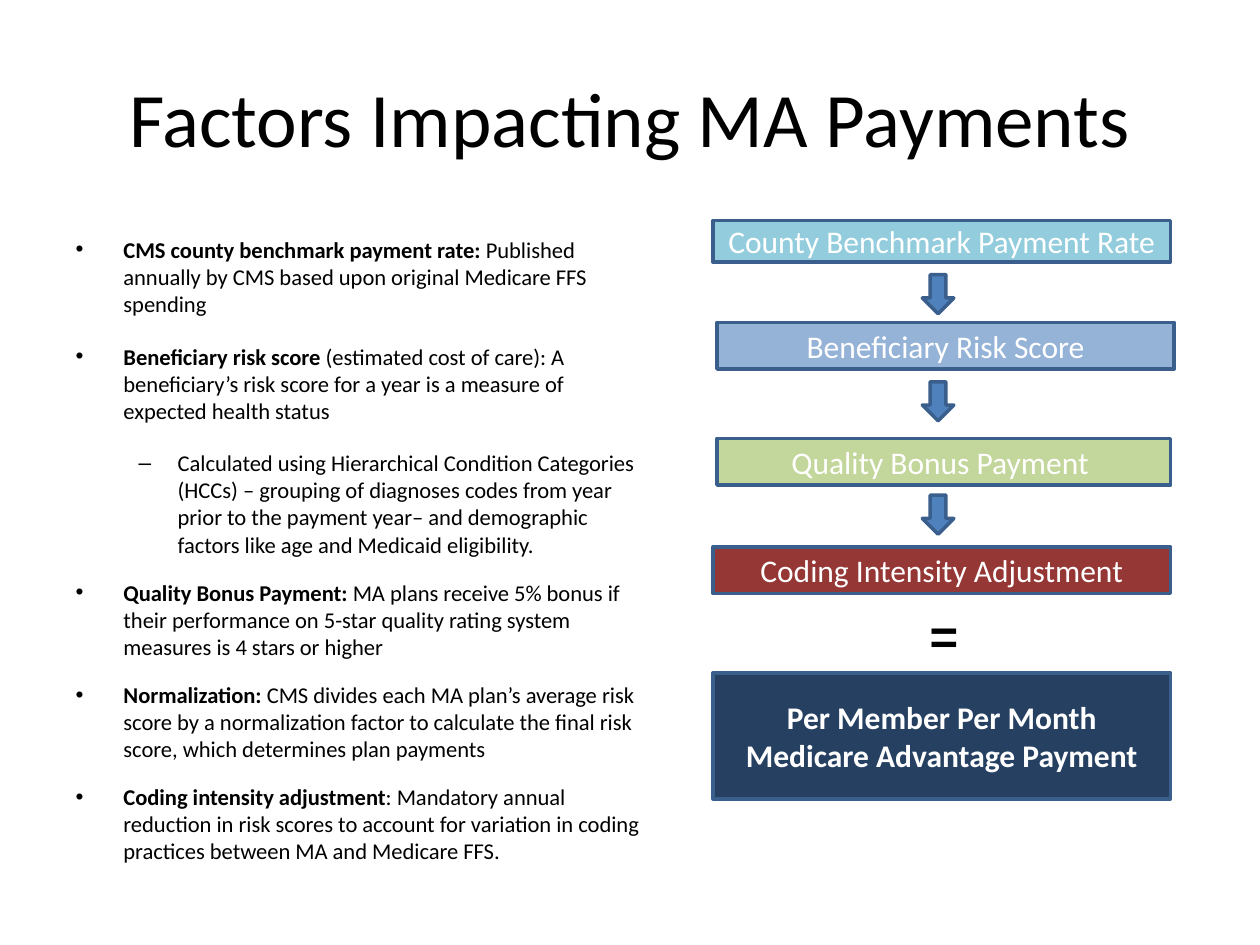
from dataclasses import dataclass

from lxml.etree import SubElement
from pptx import Presentation
from pptx.dml.color import RGBColor
from pptx.enum.shapes import MSO_SHAPE as Shape
from pptx.enum.text import MSO_ANCHOR as Anchor, MSO_AUTO_SIZE as Fit, PP_ALIGN as Align
from pptx.oxml.ns import qn
from pptx.util import Inches, Pt


@dataclass(frozen=True)
class Theme:
    """Hold the colours, fonts and type sizes."""
    font: str = "Calibri"
    sign_font: str = "Arial"
    ink: str = "000000"
    light: str = "FFFFFF"
    edge: str = "3A5F8C"
    arrow: str = "4F81BD"
    rate: str = "93CDDD"
    risk: str = "95B3D7"
    bonus: str = "C3D69B"
    coding: str = "953735"
    total: str = "254061"
    title: float = 44
    body: float = 12.9
    label: float = 18
    sign: float = 28
    line: float = 2


THEME = Theme()

POINTS = [
    (0, 0, "CMS county benchmark payment rate: ",
     "Published annually by CMS based upon original Medicare FFS spending"),
    (0, 2.6, "Beneficiary risk score ",
     "(estimated cost of care): A beneficiary’s risk score for a year is a measure "
     "of expected health status"),
    (1, 2.6, "",
     "Calculated using Hierarchical Condition Categories (HCCs) – grouping of diagnoses "
     "codes from year prior to the payment year– and demographic factors like age and "
     "Medicaid eligibility."),
    (0, 0, "Quality Bonus Payment: ",
     "MA plans receive 5% bonus if their performance on 5-star quality rating system "
     "measures is 4 stars or higher"),
    (0, 0, "Normalization: ",
     "CMS divides each MA plan’s average risk score by a normalization factor to "
     "calculate the final risk score, which determines plan payments"),
    (0, 0, "Coding intensity adjustment",
     ": Mandatory annual reduction in risk scores to account for variation in coding "
     "practices between MA and Medicare FFS."),
]
BULLETS = [("•", 0.38, 0.38), ("–", 0.81, 0.31)]

STEPS = [
    ("County Benchmark Payment Rate", THEME.rate, 0, 0, 3.63, 0.33, False),
    ("Beneficiary Risk Score", THEME.risk, 0.03, 0.81, 3.63, 0.37, False),
    ("Quality Bonus Payment ", THEME.bonus, 0.03, 1.73, 3.6, 0.37, False),
    ("Coding Intensity Adjustment", THEME.coding, 0, 2.59, 3.63, 0.37, False),
    ("Per Member Per Month Medicare Advantage Payment", THEME.total, 0, 3.59, 3.63, 1, True),
]
ARROWS = [0.43, 1.28, 2.18]


def style(font, size, color, bold=False, name=THEME.font):
    """Set the face, size, colour and weight of a font."""
    font.name, font.size, font.bold = name, Pt(size), bold
    font.color.rgb = RGBColor.from_string(color)


def place(shape, box):
    """Move a shape to a box given in inches."""
    shape.left, shape.top, shape.width, shape.height = map(Inches, box)


def block(slide, kind, box, fill):
    """Add a filled and outlined shape."""
    shape = slide.shapes.add_shape(kind, *map(Inches, box))
    shape.shadow.inherit = False
    shape.fill.solid()
    shape.fill.fore_color.rgb = RGBColor.from_string(fill)
    shape.line.color.rgb = RGBColor.from_string(THEME.edge)
    shape.line.width = Pt(THEME.line)
    return shape


def heading(slide, box):
    """Fill the title placeholder."""
    title = slide.shapes.title
    place(title, box)
    frame = title.text_frame
    frame.text = "Factors Impacting MA Payments"
    frame.auto_size = Fit.NONE
    frame.vertical_anchor = Anchor.MIDDLE
    para = frame.paragraphs[0]
    para.alignment = Align.CENTER
    style(para.runs[0].font, THEME.title, THEME.ink)


def bullet(para, level):
    """Give a paragraph the indent and mark of its level."""
    mark, left, hang = BULLETS[level]
    para.level = level
    props = para._p.get_or_add_pPr()
    props.set("marL", str(Inches(left)))
    props.set("indent", str(-Inches(hang)))
    SubElement(props, qn("a:buFont"), typeface=THEME.sign_font)
    SubElement(props, qn("a:buChar"), char=mark)


def factors(slide, box):
    """Fill the body placeholder with the list of factors."""
    body = slide.placeholders[1]
    place(body, box)
    frame = body.text_frame
    frame.auto_size = Fit.NONE
    frame.margin_top = Inches(0.27)
    for i, (level, before, lead, rest) in enumerate(POINTS):
        para = frame.add_paragraph() if i else frame.paragraphs[0]
        bullet(para, level)
        para.space_before, para.space_after = Pt(before), Pt(12)
        for text, bold in ((lead, True), (rest, False)):
            if text:
                run = para.add_run()
                run.text = text
                style(run.font, THEME.body, THEME.ink, bold)


def flow(slide, box):
    """Draw the steps that lead to the payment."""
    left, top, width, _ = box
    for text, fill, dx, dy, wide, high, bold in STEPS:
        step = block(slide, Shape.RECTANGLE, (left + dx, top + dy, wide, high), fill)
        frame = step.text_frame
        frame.text = text
        frame.word_wrap = True
        frame.vertical_anchor = Anchor.MIDDLE
        para = frame.paragraphs[0]
        para.alignment = Align.CENTER
        style(para.runs[0].font, THEME.label, THEME.light, bold)
    for dy in ARROWS:
        block(slide, Shape.DOWN_ARROW, (left + 1.66, top + dy, 0.25, 0.31), THEME.arrow)
    sign = slide.shapes.add_textbox(*map(Inches, (left + 1.62, top + 3.01, 0.28, 0.57)))
    frame = sign.text_frame
    frame.text = "="
    frame.word_wrap = True
    para = frame.paragraphs[0]
    para.alignment = Align.CENTER
    style(para.runs[0].font, THEME.sign, THEME.ink, True, THEME.sign_font)


def main():
    """Build and save the slide."""
    deck = Presentation()
    deck.slide_width, deck.slide_height = Inches(10), Inches(7.5)
    slide = deck.slides.add_slide(deck.slide_layouts[1])
    heading(slide, (0.5, 0.3, 9, 1.25))
    factors(slide, (0.5, 1.6, 4.69, 5.32))
    flow(slide, (5.66, 1.75, 3.66, 4.59))
    deck.save("out.pptx")


if __name__ == "__main__":
    main()
